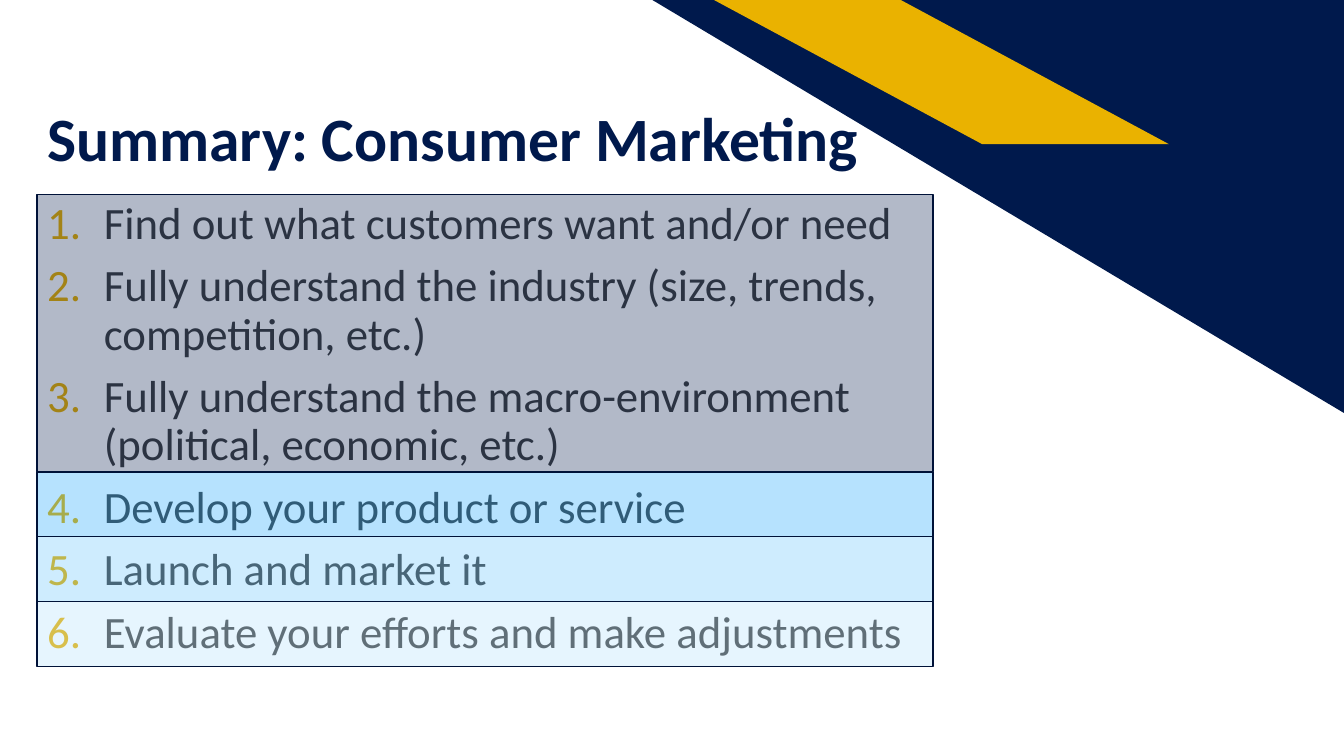
from pptx import Presentation
from pptx.dml.color import RGBColor
from pptx.enum import shapes as sh, text as tx
from pptx.oxml import parse_xml
from pptx.oxml.ns import nsdecls, qn
from pptx.util import Pt
from lxml import etree

# Content
TITLE = "Summary: Consumer Marketing"
STEPS = [
    "Find out what customers want and/or need",
    "Fully understand the industry (size, trends, competition, etc.)",
    "Fully understand the macro-environment (political, economic, etc.)",
    "Develop your product or service",
    "Launch and market it",
    "Evaluate your efforts and make adjustments",
]
# Height and colour of each band, stacked from the top
BANDS = [(198, "00194C"), (46.4, "0EA1FD"), (46.4, "5EC1FD"), (46.4, "AFE0FE")]

THEME = {
    "font": "Calibri", "navy": "00194C", "gold": "EAB200",
    "text": "3F3F3F", "edge": "001238", "title": 44, "body": 32,
}
LEFT, TOP, WIDE = 26.6, 139, 640
INDENT = 40.5


def rgb(code):
    return RGBColor.from_string(code)


def put(obj, vals):
    for key, val in vals.items():
        setattr(obj, key, val)


def style(par, size, color, bold=False):
    put(par, {"line_spacing": 0.9, "alignment": tx.PP_ALIGN.LEFT})
    put(par.font, {"name": THEME["font"], "size": Pt(size), "bold": bold})
    par.font.color.rgb = rgb(color)


def draw(slide, kind, box, color):
    shape = slide.shapes.add_shape(kind, *map(Pt, box))
    shape.shadow.inherit = False
    shape.fill.solid()
    shape.fill.fore_color.rgb = rgb(color)
    shape.line.fill.background()
    return shape


def flip(shape, *axes):
    for axis in axes:
        shape.element.spPr.find(qn("a:xfrm")).set(axis, "1")


def number(par):
    props = par._p.get_or_add_pPr()
    put_in = {"marL": INDENT, "indent": -INDENT}
    for key, val in put_in.items():
        props.set(key, str(Pt(val)))
    props.append(parse_xml(
        f'<a:buClr {nsdecls("a")}><a:srgbClr val="{THEME["gold"]}"/></a:buClr>'))
    props.append(parse_xml(
        f'<a:buFont {nsdecls("a")} typeface="+mj-lt"/>'))
    props.append(parse_xml(
        f'<a:buAutoNum {nsdecls("a")} type="arabicPeriod"/>'))


def main():
    deck = Presentation()
    put(deck, {"slide_width": Pt(960), "slide_height": Pt(540)})
    slide = deck.slides.add_slide(deck.slide_layouts[5])
    kinds = sh.MSO_SHAPE

    # Corner decoration
    corner = draw(slide, kinds.RIGHT_TRIANGLE, (466, 0, 494, 295), THEME["navy"])
    flip(corner, "flipH", "flipV")
    stripe = draw(slide, kinds.PARALLELOGRAM, (510, 0, 325, 103), THEME["gold"])
    stripe.adjustments[0] = 1.86
    flip(stripe, "flipH")

    # Title, moved in front of the decoration
    title = slide.shapes.title
    slide.shapes._spTree.append(title.element)
    put(title, {"left": Pt(LEFT), "top": Pt(28.8),
                "width": Pt(893), "height": Pt(95.8)})
    frame = title.text_frame
    frame.text = TITLE
    put(frame, {"vertical_anchor": tx.MSO_ANCHOR.BOTTOM, "word_wrap": True,
                "auto_size": tx.MSO_AUTO_SIZE.NONE, "margin_bottom": 0})
    style(frame.paragraphs[0], THEME["title"], THEME["navy"], True)

    # Numbered steps
    body = slide.shapes.add_textbox(*map(Pt, (LEFT, 139.7, 629.3, 371.5)))
    frame = body.text_frame
    frame.word_wrap = True
    for i, step in enumerate(STEPS):
        par = frame.add_paragraph() if i else frame.paragraphs[0]
        par.text = step
        number(par)
        style(par, THEME["body"], THEME["text"])
        if i:
            par.space_before = Pt(10)

    # Translucent bands over the steps
    top = TOP
    for high, color in BANDS:
        band = draw(slide, kinds.RECTANGLE, (LEFT, top, WIDE, high), color)
        tint = band.element.spPr.find(qn("a:solidFill"))[0]
        etree.SubElement(tint, qn("a:alpha")).set("val", "30000")
        band.line.color.rgb = rgb(THEME["edge"])
        band.line.width = Pt(1)
        top += high

    deck.save("out.pptx")


if __name__ == "__main__":
    main()
